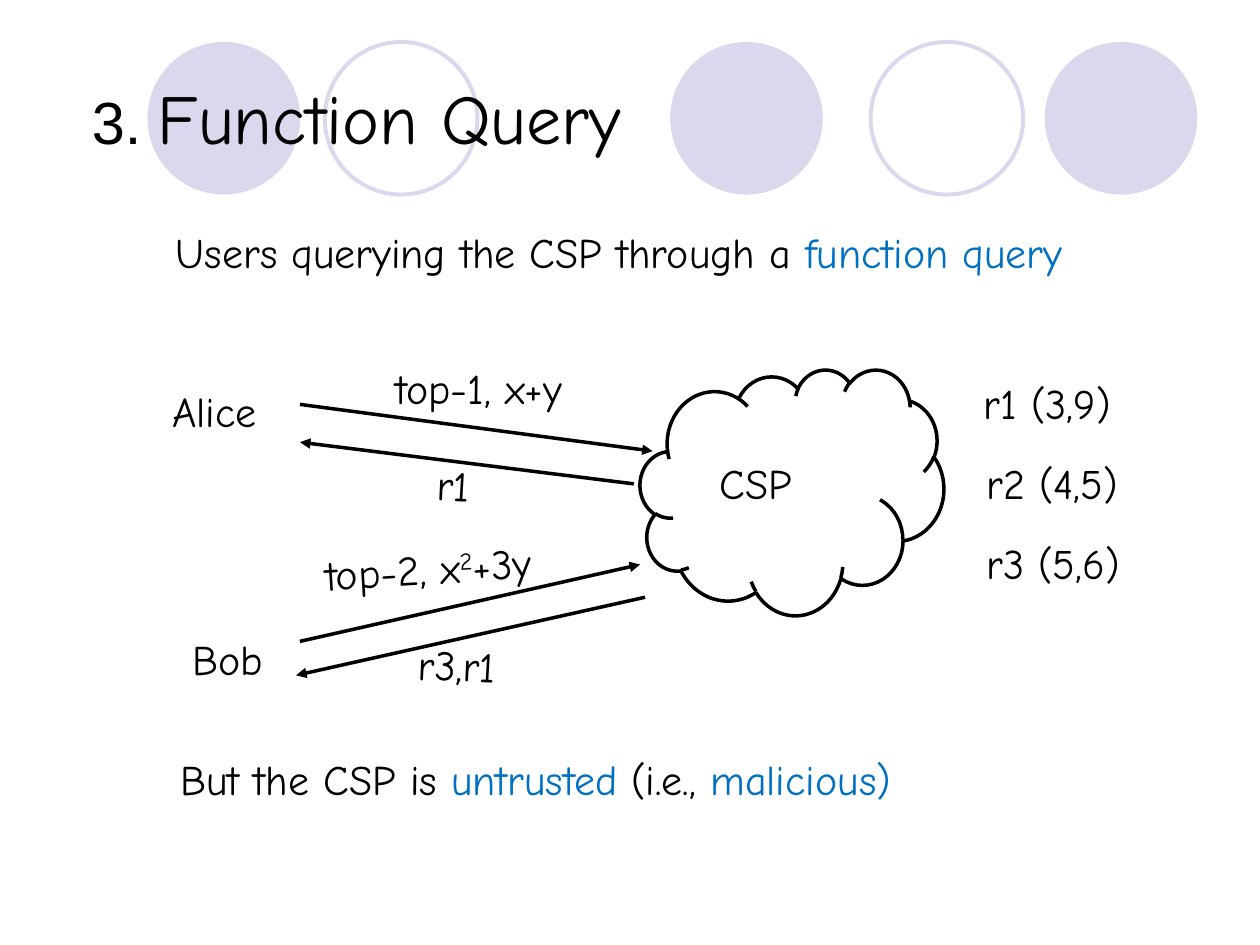
from dataclasses import dataclass

from lxml.etree import SubElement
from pptx import Presentation
from pptx.dml.color import RGBColor
from pptx.enum.shapes import MSO_CONNECTOR, MSO_SHAPE
from pptx.enum.text import MSO_ANCHOR
from pptx.oxml.ns import qn
from pptx.util import Pt


@dataclass(frozen=True)
class Theme:
    ink: RGBColor = RGBColor(0x00, 0x00, 0x00)
    accent: RGBColor = RGBColor(0x00, 0x70, 0xC0)
    lilac: RGBColor = RGBColor(0xD9, 0xD8, 0xEC)
    number_font: str = "Arial"
    font: str = "Comic Neue"
    number_size: float = 34
    title_size: float = 40
    text_size: float = 24
    line: float = 2
    ring: float = 2.25


THEME = Theme()

# Content: lengths in points
CIRCLE_TOP, CIRCLE_SIZE = 24, 87.2
CIRCLES = [(383, True), (597, True), (84.3, True), (497.5, False), (185.6, False)]  # left, filled

TITLE = [("3. ", "number"), ("Function Query", "title")]

# Runs, left, top, width
STATEMENTS = [
    ([("Users querying the CSP through a ", ""), ("function query", "accent")], 93.5, 126, 560),
    ([("But the CSP is ", ""), ("untrusted", "accent"), (" (i.e., ", ""),
      ("malicious)", "accent")], 96, 427, 560),
]

CLOUD = (365.8, 211, 173.5, 140.4)

# Runs, left, top, width, rotation
LABELS = [
    ([("CSP", "")], 404, 257.8, 111.6, 0),
    ([("Alice", "")], 91.4, 216.7, 71.3, 0),
    ([("Bob", "")], 103, 358.6, 56.9, 0),
    ([("top-1, x+y", "")], 218.9, 203.8, 125.3, 0),
    ([("r1", "")], 242.6, 259.2, 36.7, 2.5),
    ([("top-2, x", ""), ("2", "super"), ("+3y", "")], 178.6, 306, 153.4, -3.6),
    ([("r3,r1", "")], 231.8, 362.2, 69.8, 2.5),
]

RECORDS = [("r1 (3,9)", 555.1, 97.9), ("r2 (4,5)", 556.6, 102.2), ("r3 (5,6)", 556.6, 95.8)]
RECORD_TOP, RECORD_STEP = 212.4, 45.7

ARROWS = [
    ((171.4, 231.1), (373, 257.8)),
    ((362.2, 276.5), (171.4, 252.7)),
    ((171.4, 366.5), (365.8, 322.6)),
    ((368.6, 341.3), (169.2, 385.9)),
]

presentation = Presentation()
presentation.slide_width, presentation.slide_height = Pt(720), Pt(540)
slide = presentation.slides.add_slide(presentation.slide_layouts[6])


def add_outline(kind, left, top, width, height, fill=None, line=None, weight=0):
    shape = slide.shapes.add_shape(kind, Pt(left), Pt(top), Pt(width), Pt(height))
    shape.shadow.inherit = False
    if fill is None:
        shape.fill.background()
    else:
        shape.fill.solid()
        shape.fill.fore_color.rgb = fill
    if line is None:
        shape.line.fill.background()
    else:
        shape.line.color.rgb = line
        shape.line.width = Pt(weight)


def add_text(parts, left, top, width, height=36, rotation=0, wrap=False):
    box = slide.shapes.add_textbox(Pt(left), Pt(top), Pt(width), Pt(height))
    box.rotation = rotation
    frame = box.text_frame
    frame.word_wrap = wrap
    frame.vertical_anchor = MSO_ANCHOR.MIDDLE
    sizes = {"number": THEME.number_size, "title": THEME.title_size}
    for words, style in parts:
        run = frame.paragraphs[0].add_run()
        run.text = words
        run.font.name = THEME.number_font if style == "number" else THEME.font
        run.font.size = Pt(sizes.get(style, THEME.text_size))
        run.font.color.rgb = THEME.accent if style == "accent" else THEME.ink
        if style == "super":
            run.font._element.set("baseline", "30000")


def add_arrow(start, end):
    arrow = slide.shapes.add_connector(MSO_CONNECTOR.STRAIGHT, *map(Pt, start + end))
    arrow.line.color.rgb = THEME.ink
    arrow.line.width = Pt(THEME.line)
    SubElement(arrow.line._get_or_add_ln(), qn("a:tailEnd"), type="triangle")
    SubElement(arrow._element.spPr, qn("a:effectLst"))


# Row of circles behind the title
for left, filled in CIRCLES:
    add_outline(MSO_SHAPE.OVAL, left, CIRCLE_TOP, CIRCLE_SIZE, CIRCLE_SIZE,
                fill=THEME.lilac if filled else None,
                line=None if filled else THEME.lilac, weight=THEME.ring)

# Title and statements
add_text(TITLE, 45.4, 21.6, 638, height=90, wrap=True)
for parts, left, top, width in STATEMENTS:
    add_text(parts, left, top, width, wrap=True)

# Cloud, arrows and their labels
add_outline(MSO_SHAPE.CLOUD, *CLOUD, line=THEME.ink, weight=THEME.line)
for start, end in ARROWS:
    add_arrow(start, end)
for parts, left, top, width, rotation in LABELS:
    add_text(parts, left, top, width, rotation=rotation, wrap=parts[0][0] == "CSP")

# Records held by the CSP
for row, (record, left, width) in enumerate(RECORDS):
    add_text([(record, "")], left, RECORD_TOP + row * RECORD_STEP, width)

presentation.save("out.pptx")
